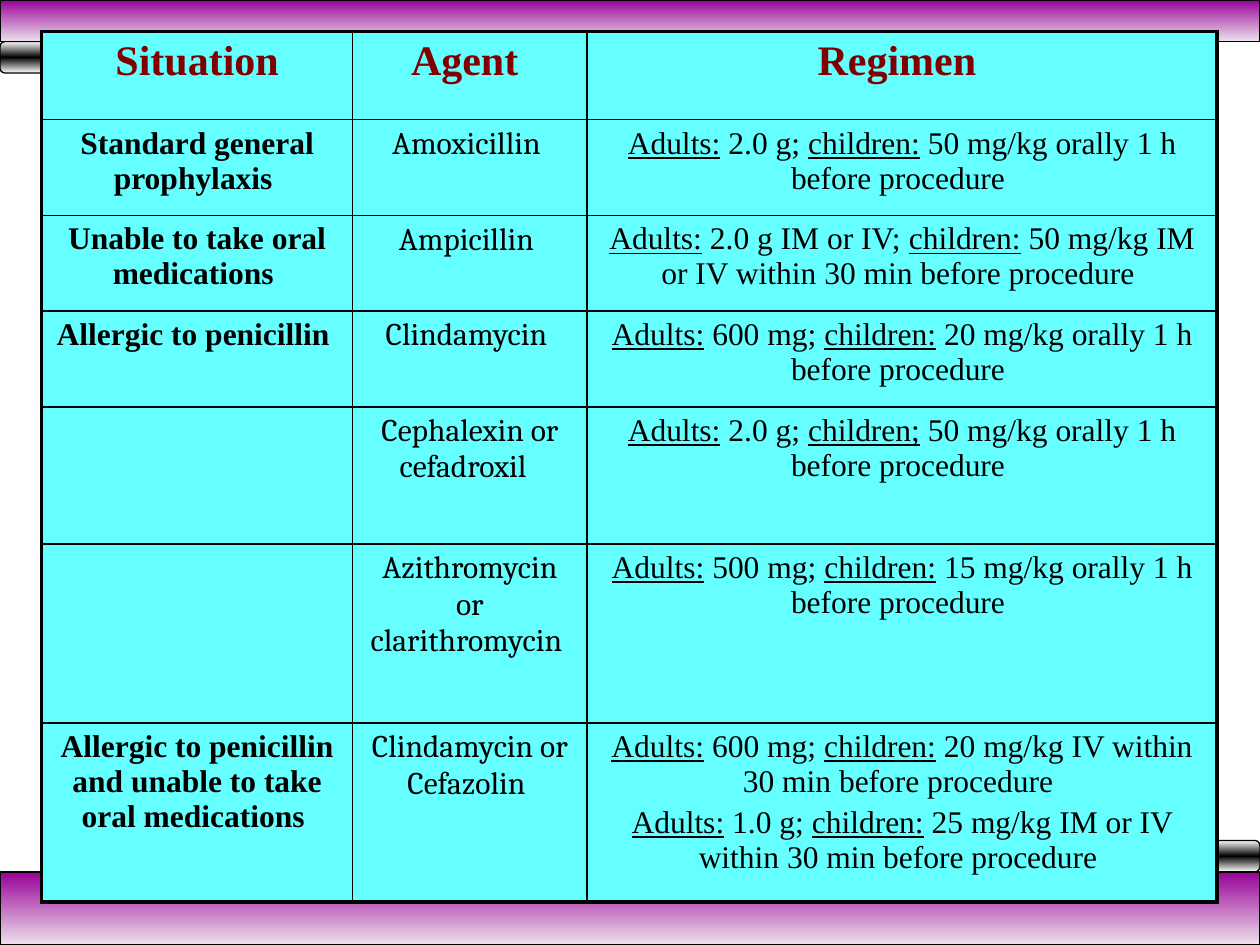
import copy

import pptx
import pptx.dml.color
import pptx.enum.shapes
import pptx.enum.text
import pptx.oxml
import pptx.oxml.ns
import pptx.util
from pptx.util import Inches

RGBColor = pptx.dml.color.RGBColor
BLACK = RGBColor(0x00, 0x00, 0x00)
WHITE = RGBColor(0xFF, 0xFF, 0xFF)
PURPLE = RGBColor(0x99, 0x00, 0x99)
PALE = RGBColor(0xEC, 0xE2, 0xEC)
CYAN = RGBColor(0x66, 0xFF, 0xFF)
MAROON = RGBColor(0x80, 0x00, 0x00)

SERIF, AGENT_FONT = "Times New Roman", "Cambria"
THIN, THICK = 1, 2.25

# Content: underscores enclose underlined words, a line break starts a paragraph
HEADER = ("Situation", "Agent ", "Regimen ")
REGIMENS = [
    ("Standard general prophylaxis ", "Amoxicillin ",
     "_Adults:_ 2.0 g; _children:_ 50 mg/kg orally 1 h before procedure "),
    ("Unable to take oral medications ", "Ampicillin ",
     "_Adults:_ 2.0 g IM or IV; _children:_ 50 mg/kg IM or IV within 30 min before procedure "),
    ("Allergic to penicillin ", "Clindamycin ",
     "_Adults:_ 600 mg; _children:_ 20 mg/kg orally 1 h before procedure "),
    ("", "Cephalexin or cefadroxil  ",
     "_Adults:_ 2.0 g; _children;_ 50 mg/kg orally 1 h before procedure "),
    ("", "Azithromycin or clarithromycin ",
     "_Adults:_ 500 mg; _children:_ 15 mg/kg orally 1 h before procedure "),
    ("Allergic to penicillin and unable to take oral medications ", "Clindamycin or Cefazolin ",
     "_Adults:_ 600 mg; _children:_ 20 mg/kg IV within 30 min before procedure \n"
     "_Adults:_ 1.0 g; _children:_ 25 mg/kg IM or IV within 30 min before procedure "),
]
COLUMN_WIDTHS = (2.47, 1.86, 5)
ROW_HEIGHTS = (0.7, 0.76, 0.76, 0.76, 1.09, 1.42, 1.42)

# Background bars: left, top, width, height, preset, gradient colours
ROUND = pptx.enum.shapes.MSO_SHAPE.ROUNDED_RECTANGLE
RECT = pptx.enum.shapes.MSO_SHAPE.RECTANGLE
ROD, BAND = (WHITE, BLACK, WHITE), (PURPLE, PALE)
BARS = [
    (0, 0.33, 9.5, 0.25, ROUND, ROD),
    (0.5, 6.67, 9.5, 0.25, ROUND, ROD),
    (0, 0, 10, 0.33, RECT, BAND),
    (0, 6.92, 10, 0.58, RECT, BAND),
]


def add_bar(page, left, top, width, height, preset, colours):
    bar = page.shapes.add_shape(preset, Inches(left), Inches(top), Inches(width), Inches(height))
    bar.shadow.inherit = False
    bar.line.color.rgb = BLACK
    bar.line.width = pptx.util.Pt(0.75)
    bar.fill.gradient()
    bar.fill.gradient_angle = 270
    stops = bar.fill._fill._gradFill.gsLst
    while len(stops) < len(colours):
        stops.append(copy.deepcopy(stops[-1]))
    for index, (stop, colour) in enumerate(zip(bar.fill.gradient_stops, colours)):
        stop.position = index / (len(colours) - 1)
        stop.color.rgb = colour


def write(frame, text, *, font=SERIF, size=18, bold=False, colour=BLACK):
    for index, line in enumerate(text.split("\n")):
        para = frame.paragraphs[0] if index == 0 else frame.add_paragraph()
        para.alignment = pptx.enum.text.PP_ALIGN.CENTER
        para.space_before = pptx.util.Pt(0)
        spacing = para._p.pPr.find(pptx.oxml.ns.qn("a:spcBef"))
        spacing.remove(spacing[0])
        spacing.append(pptx.oxml.parse_xml(
            f'<a:spcPct {pptx.oxml.ns.nsdecls("a")} val="20000"/>'))
        for part, words in enumerate(line.split("_")):
            if not words:
                continue
            span = para.add_run()
            span.text = words
            span.font.name = font
            span.font.size = pptx.util.Pt(size)
            span.font.bold = bold
            span.font.underline = part % 2 == 1
            span.font.color.rgb = colour


def set_borders(cell, widths):
    properties = cell._tc.get_or_add_tcPr()
    for index, (side, width) in enumerate(widths.items()):
        properties.insert(index, pptx.oxml.parse_xml(
            f'<a:ln{side} {pptx.oxml.ns.nsdecls("a")} w="{pptx.util.Pt(width)}">'
            f'<a:solidFill><a:srgbClr val="{BLACK}"/></a:solidFill></a:ln{side}>'))


def add_regimen_table(page):
    rows = [HEADER] + REGIMENS
    last_row, last_column = len(rows) - 1, len(HEADER) - 1
    table = page.shapes.add_table(
        len(rows), len(HEADER), Inches(0.33), Inches(0.25),
        Inches(sum(COLUMN_WIDTHS)), Inches(sum(ROW_HEIGHTS))).table
    for column, width in zip(table.columns, COLUMN_WIDTHS):
        column.width = Inches(width)
    for row, height in zip(table.rows, ROW_HEIGHTS):
        row.height = Inches(height)

    header_style = dict(size=24, bold=True, colour=MAROON)
    column_styles = (dict(bold=True), dict(font=AGENT_FONT), {})
    for r, texts in enumerate(rows):
        for c, text in enumerate(texts):
            cell = table.cell(r, c)
            cell.fill.solid()
            cell.fill.fore_color.rgb = CYAN
            write(cell.text_frame, text, **(header_style if r == 0 else column_styles[c]))
            # Thick lines only on the outer edge
            set_borders(cell, {
                "L": THICK if c == 0 else THIN,
                "R": THICK if c == last_column else THIN,
                "T": THICK if r == 0 else THIN,
                "B": THICK if r == last_row else THIN,
            })


def main():
    deck = pptx.Presentation()
    deck.slide_width, deck.slide_height = Inches(10), Inches(7.5)
    page = deck.slides.add_slide(deck.slide_layouts[6])
    for bar in BARS:
        add_bar(page, *bar)
    add_regimen_table(page)
    deck.save("out.pptx")


if __name__ == "__main__":
    main()
